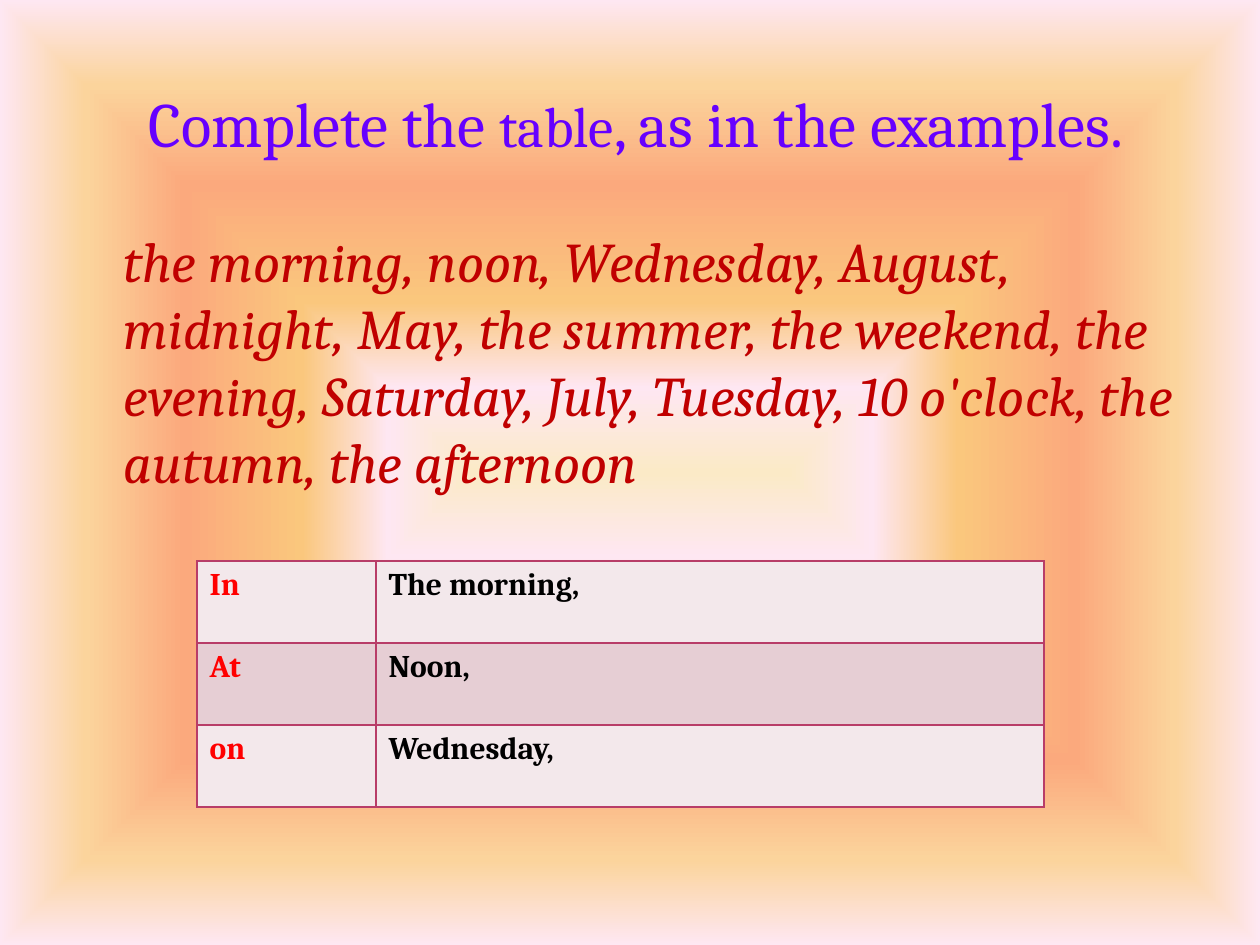
"""Build a grammar exercise slide with a word list and a table to complete."""
from pptx import Presentation, oxml, util as u
from pptx.dml.color import RGBColor
from pptx.enum import text as t
from pptx.oxml.ns import nsdecls, qn

TITLE = [("Complete the ", 36), ("table", 32.4), (", as in the examples.", 36)]
WORDS = ["the morning", "noon", "Wednesday", "August", "midnight", "May",
         "the summer", "the weekend", "the evening", "Saturday", "July",
         "Tuesday", "10 o'clock", "the autumn", "the afternoon"]
ROWS = [("In", "The morning,"), ("At", "Noon,"), ("on", "Wednesday,")]
THEME = {
    "font": "Cambria", "title": "6600FF", "words": "C00000",
    "keys": ("FF0000", "000000"), "bands": ("F3E8EB", "E6CED4"),
    "line": "B83D68", "list": 32, "cell": 18,
    "glow": [(0, "FBEAC7"), (18, "FEE7F2"), (36, "FAC77D"),
             (61, "FBA97D"), (82, "FBD49C"), (100, "FEE7F2")],
}
BOXES = {"title": (69, 78, 1134, 158), "body": (63, 220, 1134, 624)}
COLS, ROW, LEFT, TOP = (179, 668), 82, 197, 561
SCALE = 914400 / 126


def px(n):
    return u.Emu(round(n * SCALE))


def write(para, words, size, color, bold=False, italic=False):
    run = para.add_run()
    run.text = words
    font = run.font
    font.name, font.size = THEME["font"], u.Pt(size)
    font.bold, font.italic = bold, italic
    font.color.rgb = RGBColor.from_string(color)


def place(shape, box):
    shape.left, shape.top, shape.width, shape.height = map(px, box)
    frame = shape.text_frame
    frame.word_wrap = True
    frame.auto_size = t.MSO_AUTO_SIZE.NONE
    frame.vertical_anchor = t.MSO_ANCHOR.TOP
    return frame.paragraphs[0]


def paint(slide):
    fill = slide.background.fill
    fill.gradient()
    stops = "".join(f'<a:gs pos="{pos * 1000}"><a:srgbClr val="{color}"/></a:gs>'
                    for pos, color in THEME["glow"])
    new = oxml.parse_xml(
        f'<a:gradFill {nsdecls("a")} rotWithShape="1"><a:gsLst>{stops}</a:gsLst>'
        '<a:path path="shape"><a:fillToRect l="50000" t="50000" r="50000" '
        'b="50000"/></a:path></a:gradFill>')
    old = next(slide.element.iter(qn("a:gradFill")))
    old.getparent().replace(old, new)


def edge(cell):
    props = cell._tc.get_or_add_tcPr()
    for n, side in enumerate(("lnL", "lnR", "lnT", "lnB")):
        props.insert(n, oxml.parse_xml(
            f'<a:{side} {nsdecls("a")} w="12700"><a:solidFill>'
            f'<a:srgbClr val="{THEME["line"]}"/></a:solidFill></a:{side}>'))


def add_grid(slide):
    table = slide.shapes.add_table(
        len(ROWS), len(COLS), px(LEFT), px(TOP),
        px(sum(COLS)), px(ROW * len(ROWS))).table
    table.first_row = table.horz_banding = False
    for col, width in zip(table.columns, COLS):
        col.width = px(width)
    for r, row in enumerate(ROWS):
        table.rows[r].height = px(ROW)
        for c, words in enumerate(row):
            cell = table.cell(r, c)
            cell.fill.solid()
            cell.fill.fore_color.rgb = RGBColor.from_string(THEME["bands"][r % 2])
            edge(cell)
            write(cell.text_frame.paragraphs[0], words, THEME["cell"],
                  THEME["keys"][c], bold=True)


def main():
    deck = Presentation()
    deck.slide_width, deck.slide_height = u.Inches(10), u.Inches(7.5)
    slide = deck.slides.add_slide(deck.slide_layouts[1])
    paint(slide)
    head = place(slide.shapes.title, BOXES["title"])
    head.alignment = t.PP_ALIGN.CENTER
    for words, size in TITLE:
        write(head, words, size, THEME["title"])
    body = place(slide.placeholders[1], BOXES["body"])
    props = body._p.get_or_add_pPr()
    props.set("marL", str(px(48)))
    props.set("indent", "0")
    props.append(oxml.parse_xml(f'<a:buNone {nsdecls("a")}/>'))
    write(body, ", ".join(WORDS), THEME["list"], THEME["words"], italic=True)
    add_grid(slide)
    deck.save("out.pptx")


if __name__ == "__main__":
    main()
